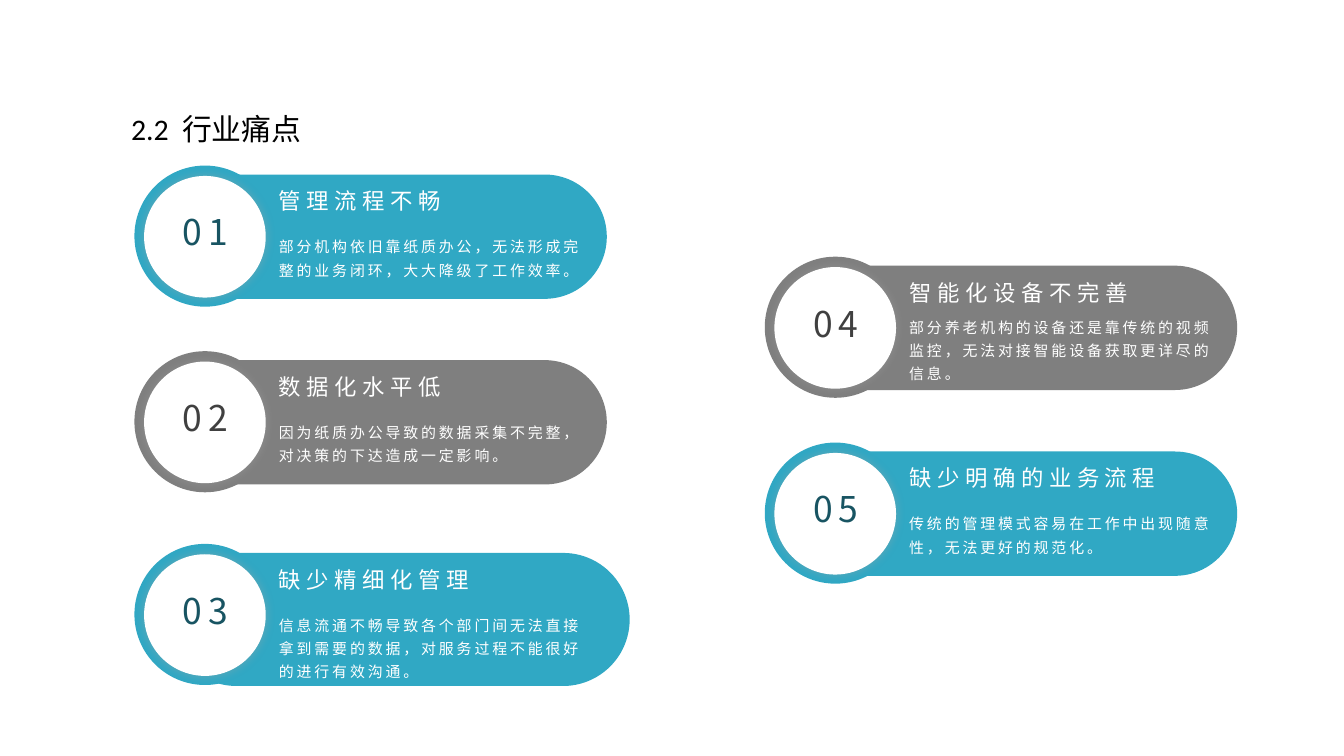
from dataclasses import dataclass

from lxml.etree import SubElement
from pptx import Presentation
from pptx.dml.color import RGBColor
from pptx.enum.shapes import MSO_SHAPE
from pptx.enum.text import MSO_AUTO_SIZE, PP_ALIGN
from pptx.oxml.ns import qn
from pptx.util import Inches, Pt

COLUMN = ROW = Inches(0.1)
SLIDE_WIDTH = 100 * COLUMN
SLIDE_HEIGHT = SLIDE_WIDTH * 9 // 16
SANS = "Noto Sans CJK SC"
WHITE, BLACK, TEAL, GREY = "FFFFFF", "000000", "30A8C4", "7F7F7F"
NUMBER_COLOURS = {TEAL: "185462", GREY: "404040"}


@dataclass(frozen=True)
class Box:
    """A rectangle in grid columns and rows."""
    column: float
    row: float
    columns: float
    rows: float

    def within(self, column: float, row: float) -> "Box":
        """Return this box moved by a card's origin."""
        return Box(self.column + column, self.row + row, self.columns, self.rows)

    def emu(self) -> tuple[int, int, int, int]:
        """Return left, top, width and height as slide lengths."""
        return (round(self.column * COLUMN), round(self.row * ROW),
                round(self.columns * COLUMN), round(self.rows * ROW))


@dataclass(frozen=True)
class PainPoint:
    """One numbered card, placed by the corner of its ring."""
    number: str
    heading: str
    detail: str
    colour: str
    column: float
    row: float
    heading_columns: float
    pill_columns: float = 32.5
    pill_rows: float = 9.25
    detail_row: float = 4.5
    detail_rows: float = 4.8


@dataclass(frozen=True)
class Style:
    """Type settings, with letter spacing in points."""
    size: float
    colour: str
    font: str = SANS
    spacing: float = 0
    align: PP_ALIGN = PP_ALIGN.LEFT
    line: float = 1
    after: float = 0
    bottom: float = 0.05


LEFT, RIGHT = 10, 56.9
RING = Box(0, 0, 10.5, 10.5)
CORE = Box(0.72, 0.77, 9.05, 9.05)
NUMBER = Box(1.82, 2.85, 6.9, 4.9)
PAIN_POINTS = (
    PainPoint("01", "管理流程不畅", "部分机构依旧靠纸质办公，无法形成完整的业务闭环，大大降级了工作效率。",
              TEAL, LEFT, 12.32, 15.2),
    PainPoint("02", "数据化水平低", "因为纸质办公导致的数据采集不完整，对决策的下达造成一定影响。",
              GREY, LEFT, 26.13, 16.9),
    PainPoint("03", "缺少精细化管理",
              "信息流通不畅导致各个部门间无法直接拿到需要的数据，对服务过程不能很好的进行有效沟通。",
              TEAL, LEFT, 40.47, 19.8, pill_columns=34.2, pill_rows=9.9, detail_rows=6),
    PainPoint("04", "智能化设备不完善",
              "部分养老机构的设备还是靠传统的视频监控，无法对接智能设备获取更详尽的信息。",
              GREY, RIGHT, 19.1, 21.9, detail_row=3.7, detail_rows=6.8),
    PainPoint("05", "缺少明确的业务流程", "传统的管理模式容易在工作中出现随意性，无法更好的规范化。",
              TEAL, RIGHT, 32.93, 21),
)


def rgb(colour: str) -> RGBColor:
    """Turn a hex string into a colour."""
    return RGBColor.from_string(colour)


def draw_shape(slide, preset: MSO_SHAPE, box: Box, colour: str):
    """Draw a flat, borderless shape."""
    shape = slide.shapes.add_shape(preset, *box.emu())
    shape.shadow.inherit = False
    shape.fill.solid()
    shape.fill.fore_color.rgb = rgb(colour)
    shape.line.fill.background()
    return shape


def add_glow(shape) -> None:
    """Give a shape a soft grey shadow on all sides."""
    effects = shape._element.spPr.find(qn("a:effectLst"))
    shadow = SubElement(effects, qn("a:outerShdw"), blurRad=str(Pt(5)), dist="0",
                        dir="0", algn="ctr", rotWithShape="0")
    tint = SubElement(shadow, qn("a:srgbClr"), val="A6A6A6")
    SubElement(tint, qn("a:alpha"), val="40000")


def draw_text(slide, box: Box, words: str, style: Style):
    """Write one wrapped paragraph and return its frame."""
    frame = slide.shapes.add_textbox(*box.emu()).text_frame
    frame.word_wrap = True
    frame.margin_bottom = Inches(style.bottom)
    paragraph = frame.paragraphs[0]
    paragraph.alignment = style.align
    paragraph.line_spacing = style.line
    paragraph.space_after = Pt(style.after)
    paragraph.font.size = Pt(style.size)
    paragraph.font.name = style.font
    paragraph.font.color.rgb = rgb(style.colour)
    run = paragraph.add_run()
    run.text = words
    properties = run._r.get_or_add_rPr()
    properties.set("spc", str(round(style.spacing * 100)))
    if style.font == SANS:
        SubElement(properties, qn("a:ea"), typeface=SANS)
    return frame


def draw_pain_point(slide, point: PainPoint) -> None:
    """Draw one card: pill, ring, white core and its three texts."""
    origin = (point.column, point.row)
    pill = Box(2.65, 0.67, point.pill_columns, point.pill_rows)
    rounded = draw_shape(slide, MSO_SHAPE.ROUNDED_RECTANGLE, pill.within(*origin), point.colour)
    rounded.adjustments[0] = 0.5
    draw_shape(slide, MSO_SHAPE.OVAL, RING.within(*origin), point.colour)
    add_glow(draw_shape(slide, MSO_SHAPE.OVAL, CORE.within(*origin), WHITE))
    draw_text(slide, NUMBER.within(*origin), point.number,
              Style(19, NUMBER_COLOURS[point.colour], spacing=3, align=PP_ALIGN.CENTER, bottom=0))
    detail = Box(9.77, point.detail_row, 25.4, point.detail_rows)
    draw_text(slide, detail.within(*origin), point.detail,
              Style(8, WHITE, spacing=1.5, line=1.3, after=10))
    heading = Box(9.77, 1.15, point.heading_columns, 3.3)
    draw_text(slide, heading.within(*origin), point.heading,
              Style(12, WHITE, spacing=3, bottom=0))


def main() -> None:
    """Build the slide and save it."""
    deck = Presentation()
    deck.slide_width, deck.slide_height = SLIDE_WIDTH, SLIDE_HEIGHT
    slide = deck.slides.add_slide(deck.slide_layouts[6])
    title = draw_text(slide, Box(8.77, 7.73, 33.3, 3.7), "2.2  行业痛点",
                      Style(16, BLACK, font="Calibri"))
    title.auto_size = MSO_AUTO_SIZE.SHAPE_TO_FIT_TEXT
    for point in PAIN_POINTS:
        draw_pain_point(slide, point)
    deck.save("out.pptx")


if __name__ == "__main__":
    main()
